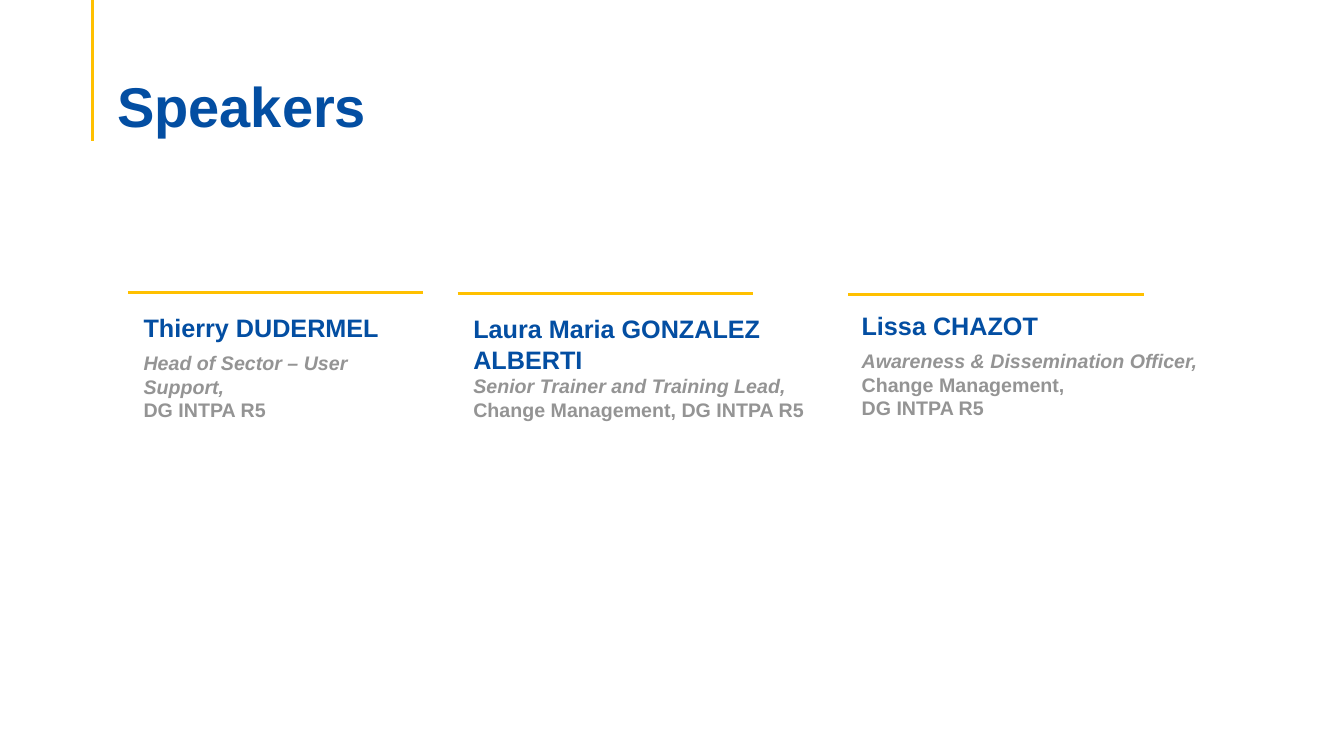
from lxml import etree
from pptx import Presentation
from pptx.dml.color import RGBColor
from pptx.enum import shapes, text
from pptx.oxml import ns
from pptx.util import Pt

COLORS = {"blue": "034EA2", "grey": "949494", "gold": "FFC000"}


def add_rule(x1, y1, x2, y2):
    line = s.shapes.add_connector(shapes.MSO_CONNECTOR.STRAIGHT, Pt(x1), Pt(y1), Pt(x2), Pt(y2))
    line.line.color.rgb = RGBColor.from_string(COLORS["gold"])
    line.line.width = Pt(2.25)
    etree.SubElement(line._element.spPr, ns.qn("a:effectLst"))


def style(p, size, color):
    p.alignment = text.PP_ALIGN.LEFT
    p.font.name = "Arial"
    p.font.size = Pt(size)
    p.font.bold = True
    p.font.color.rgb = RGBColor.from_string(COLORS[color])


prs = Presentation()
prs.slide_width, prs.slide_height = Pt(960), Pt(540)
s = prs.slides.add_slide(prs.slide_layouts[5])

add_rule(66.2, 0, 66.2, 100.8)

title = s.shapes.title
title.left, title.top, title.width, title.height = Pt(76.5), Pt(38.2), Pt(828), Pt(62)
tf = title.text_frame
tf.text = "Speakers"
tf.vertical_anchor = text.MSO_ANCHOR.BOTTOM
tf.auto_size = text.MSO_AUTO_SIZE.NONE
tf.margin_bottom = Pt(0.7)
tf.paragraphs[0].line_spacing = 0.9
style(tf.paragraphs[0], 40, "blue")

speakers = [
    ("Thierry DUDERMEL", "Head of Sector – User Support,", ["DG INTPA R5"],
     95.5, 208.8, 211, 6, 91.4, 208.8),
    ("Laura Maria GONZALEZ ALBERTI", "Senior Trainer and Training Lead,",
     ["Change Management, DG INTPA R5"], 331, 209.6, 258.5, 0, 326.9, 209.6),
    ("Lissa CHAZOT", "Awareness & Dissemination Officer,", ["Change Management,", "DG INTPA R5"],
     608.4, 207.2, 261.4, 6, 605.9, 210.3),
]
for name, role, unit, left, top, width, gap, rule_left, rule_top in speakers:
    sp = s.shapes.add_textbox(Pt(left), Pt(top), Pt(width), Pt(96))
    tf = sp.text_frame
    tf.word_wrap = True
    tf.vertical_anchor = text.MSO_ANCHOR.TOP
    tf.margin_left = tf.margin_right = Pt(7.2)
    tf.margin_top, tf.margin_bottom = Pt(14.4), Pt(3.6)

    p = tf.paragraphs[0]
    p.text = name
    p.space_after = Pt(gap)
    style(p, 18, "blue")

    p = tf.add_paragraph()
    p.space_after = Pt(25)
    style(p, 14, "grey")
    r = p.add_run()
    r.text = role
    r.font.italic = True
    for line in unit:
        p.add_line_break()
        p.add_run().text = line

    add_rule(rule_left, rule_top, rule_left + 211, rule_top)

prs.save("out.pptx")
